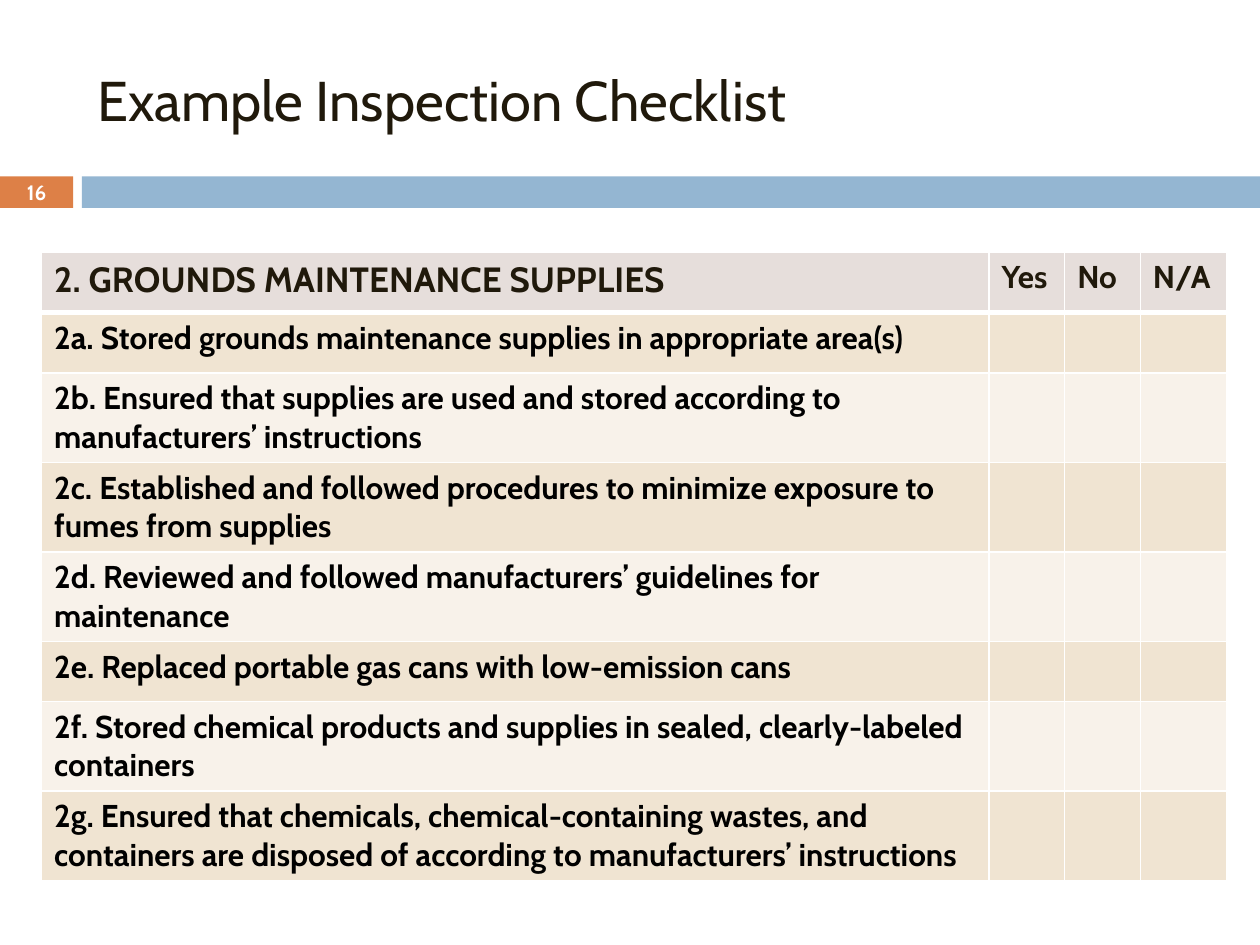
from lxml import etree
from pptx import Presentation
from pptx.dml.color import RGBColor
from pptx.enum.shapes import MSO_SHAPE
from pptx.enum.text import MSO_ANCHOR, PP_ALIGN
from pptx.oxml.ns import qn
from pptx.util import Inches, Pt

RECTANGLE = MSO_SHAPE.RECTANGLE
MIDDLE = MSO_ANCHOR.MIDDLE
LEFT, CENTER = PP_ALIGN.LEFT, PP_ALIGN.CENTER

FONT = "Cabin"
DARK = RGBColor(0x20, 0x19, 0x0B)
BLACK = RGBColor(0x00, 0x00, 0x00)
WHITE = RGBColor(0xFF, 0xFF, 0xFF)
ORANGE = RGBColor(0xDD, 0x80, 0x47)
BLUE = RGBColor(0x94, 0xB6, 0xD2)
HEADER_FILL = RGBColor(0xE6, 0xDE, 0xDB)
BAND_FILLS = [RGBColor(0xF0, 0xE4, 0xD2), RGBColor(0xF8, 0xF2, 0xEA)]

TITLE = "Example Inspection Checklist"
PAGE_NUMBER = "16"
HEADER = ["2. GROUNDS MAINTENANCE SUPPLIES", "Yes", "No", "N/A"]
# Checklist item and the number of lines it takes
ITEMS = [
    ("2a. Stored grounds maintenance supplies in appropriate area(s)", 1),
    ("2b. Ensured that supplies are used and stored according to manufacturers’ instructions", 2),
    ("2c. Established and followed procedures to minimize exposure to fumes from supplies", 2),
    ("2d. Reviewed and followed manufacturers’ guidelines for maintenance", 2),
    ("2e. Replaced portable gas cans with low-emission cans", 1),
    ("2f. Stored chemical products and supplies in sealed, clearly-labeled containers", 2),
    ("2g. Ensured that chemicals, chemical-containing wastes, and containers are disposed of "
     "according to manufacturers’ instructions", 2),
]
COLUMN_WIDTHS = [7.52, 0.6, 0.6, 0.69]
ROW_HEIGHTS = {1: 0.48, 2: 0.71}


def write(frame, text, *, size, color, bold=False, align=LEFT):
    paragraph = frame.paragraphs[0]
    paragraph.alignment = align
    run = paragraph.add_run()
    run.text = text
    run.font.name = FONT
    run.font.size = Pt(size)
    run.font.bold = bold
    run.font.color.rgb = color


def add_bar(slide, left, width, color):
    bar = slide.shapes.add_shape(RECTANGLE, Inches(left), Inches(1.4), Inches(width), Inches(0.25))
    bar.shadow.inherit = False
    bar.fill.solid()
    bar.fill.fore_color.rgb = color
    bar.line.fill.background()


def style_cell(cell, fill, bottom=1):
    """Fill the cell and rule it in white, with line widths in points."""
    cell.fill.solid()
    cell.fill.fore_color.rgb = fill
    properties = cell._tc.get_or_add_tcPr()
    edges = {"a:lnL": 1, "a:lnR": 1, "a:lnT": 1, "a:lnB": bottom}
    for position, (tag, width) in enumerate(edges.items()):
        line = etree.Element(qn(tag), w=str(Pt(width)))
        solid = etree.SubElement(line, qn("a:solidFill"))
        etree.SubElement(solid, qn("a:srgbClr"), val=str(WHITE))
        properties.insert(position, line)


def add_checklist(slide):
    heights = [ROW_HEIGHTS[lines] for lines in [1] + [lines for _, lines in ITEMS]]
    table = slide.shapes.add_table(
        len(heights), len(COLUMN_WIDTHS), Inches(0.33), Inches(2),
        Inches(sum(COLUMN_WIDTHS)), Inches(sum(heights))).table
    for column, width in zip(table.columns, COLUMN_WIDTHS):
        column.width = Inches(width)
    for row, height in zip(table.rows, heights):
        row.height = Inches(height)

    for index, heading in enumerate(HEADER):
        cell = table.cell(0, index)
        style_cell(cell, HEADER_FILL, bottom=3)
        write(cell.text_frame, heading, size=18 if index else 20, color=DARK, bold=True)
    for index, (item, _) in enumerate(ITEMS):
        for cell in table.rows[index + 1].cells:
            style_cell(cell, BAND_FILLS[index % 2])
        write(table.cell(index + 1, 0).text_frame, item, size=18, color=BLACK, bold=True)


def main():
    prs = Presentation()
    prs.slide_width, prs.slide_height = Inches(10), Inches(7.5)
    slide = prs.slides.add_slide(prs.slide_layouts[5])

    add_bar(slide, 0, 0.58, ORANGE)
    add_bar(slide, 0.65, 9.35, BLUE)

    title = slide.shapes.title
    title.left, title.top = Inches(0.67), Inches(0.25)
    title.width, title.height = Inches(8.5), Inches(1.08)
    title.text_frame.vertical_anchor = MIDDLE
    write(title.text_frame, TITLE, size=32, color=DARK)

    number = slide.shapes.add_textbox(0, Inches(1.39), Inches(0.58), Inches(0.27)).text_frame
    number.word_wrap = True
    number.vertical_anchor = MIDDLE
    number.margin_left = number.margin_right = number.margin_top = number.margin_bottom = 0
    write(number, PAGE_NUMBER, size=11.9, color=WHITE, bold=True, align=CENTER)

    add_checklist(slide)
    prs.save("out.pptx")


if __name__ == "__main__":
    main()
